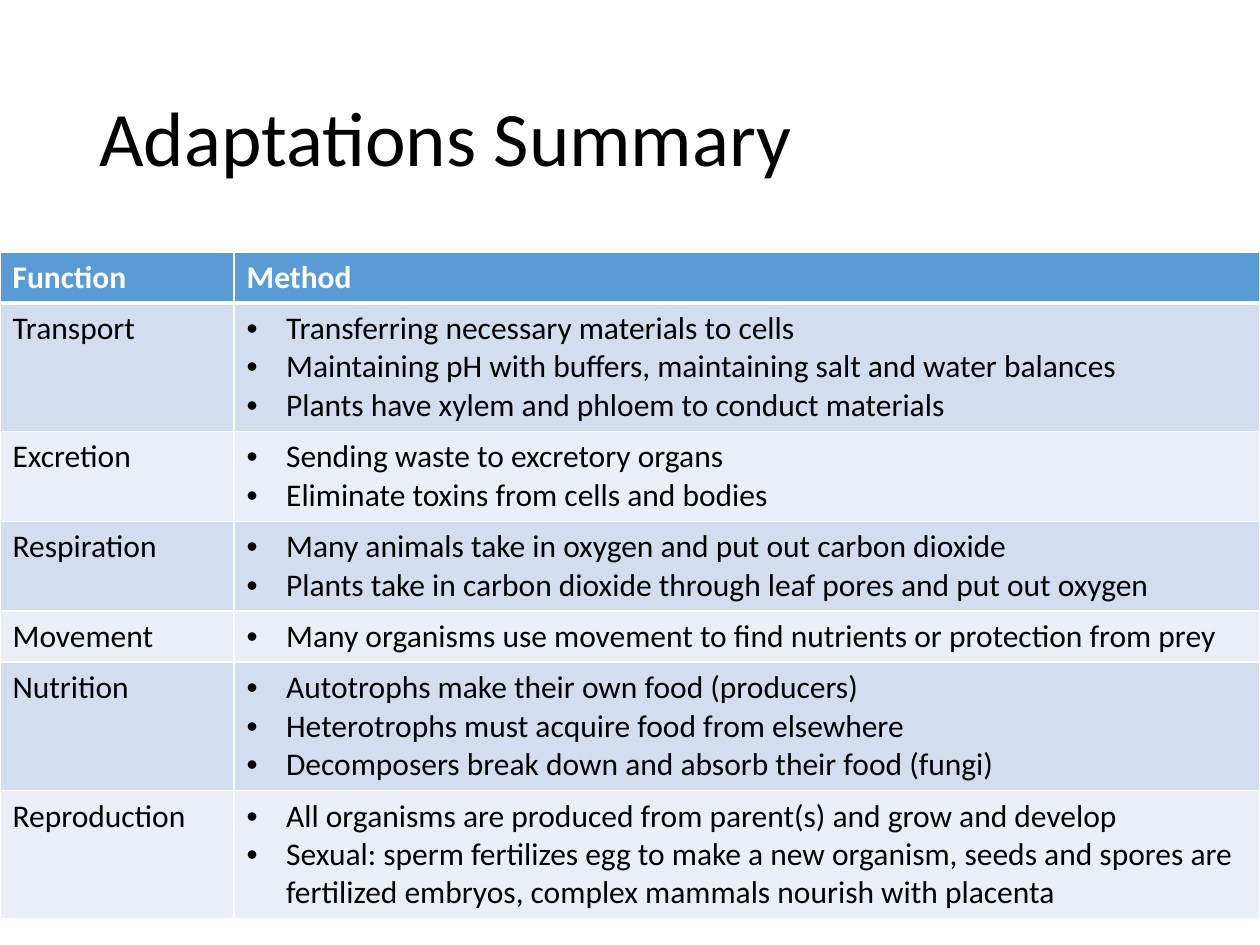
from lxml import etree
from pptx import Presentation
from pptx import util as u
from pptx.dml.color import RGBColor
from pptx.enum import text
from pptx.oxml.ns import qn

COLORS = {"text": "000000", "white": "FFFFFF", "header": "5B9BD5",
          "odd": "D2DEEF", "even": "EAEFF7"}
FONT = "Calibri"
LINE_HEIGHT, CELL_PADDING = 0.78, 0.25  # cm

HEADINGS = ["Function", "Method"]
# Function, its methods, lines of text they take
ADAPTATIONS = [
    ("Transport", ["Transferring necessary materials to cells",
                   "Maintaining pH with buffers, maintaining salt and water balances",
                   "Plants have xylem and phloem to conduct materials"], 3),
    ("Excretion", ["Sending waste to excretory organs",
                   "Eliminate toxins from cells and bodies"], 2),
    ("Respiration", ["Many animals take in oxygen and put out carbon dioxide",
                     "Plants take in carbon dioxide through leaf pores and put out oxygen"], 2),
    ("Movement", ["Many organisms use movement to find nutrients or protection from prey"], 1),
    ("Nutrition", ["Autotrophs make their own food (producers)",
                   "Heterotrophs must acquire food from elsewhere",
                   "Decomposers break down and absorb their food (fungi)"], 3),
    ("Reproduction", ["All organisms are produced from parent(s) and grow and develop",
                      "Sexual: sperm fertilizes egg to make a new organism, seeds and spores are "
                      "fertilized embryos, complex mammals nourish with placenta"], 3),
]


class SlideBuilder:
    def __init__(self, slide):
        self.slide = slide

    def style(self, p, size, color="text", bold=False):
        p.alignment = text.PP_ALIGN.LEFT
        for r in p.runs:
            r.font.name, r.font.size, r.font.bold = FONT, u.Pt(size), bold
            r.font.color.rgb = RGBColor.from_string(COLORS[color])

    def title(self, words, left, top, width, height):
        sp = self.slide.shapes.title
        sp.left, sp.top, sp.width, sp.height = map(u.Cm, (left, top, width, height))
        tf = sp.text_frame
        tf.text = words
        tf.vertical_anchor = text.MSO_ANCHOR.MIDDLE
        p = tf.paragraphs[0]
        p.line_spacing = 0.9
        self.style(p, 44)

    def table(self, left, top, col_widths, row_heights):
        frame = self.slide.shapes.add_table(
            len(row_heights), len(col_widths), u.Cm(left), u.Cm(top),
            u.Cm(sum(col_widths)), u.Cm(sum(row_heights)))
        for col, width in zip(frame.table.columns, col_widths):
            col.width = u.Cm(width)
        for row, height in zip(frame.table.rows, row_heights):
            row.height = u.Cm(height)
        return frame.table

    def cell(self, cell, lines, fill, color="text", bold=False, bullets=False, bottom=1):
        self.borders(cell, bottom)
        cell.fill.solid()
        cell.fill.fore_color.rgb = RGBColor.from_string(COLORS[fill])
        cell.text_frame.text = "\n".join(lines)
        for p in cell.text_frame.paragraphs:
            self.style(p, 18, color, bold)
            if bullets:
                self.bullet(p)

    def borders(self, cell, bottom):
        tc_pr = cell._tc.get_or_add_tcPr()
        for side, width in (("L", 1), ("R", 1), ("T", 1), ("B", bottom)):
            ln = etree.SubElement(tc_pr, qn(f"a:ln{side}"), w=str(u.Pt(width)))
            fill = etree.SubElement(ln, qn("a:solidFill"))
            etree.SubElement(fill, qn("a:srgbClr"), val=COLORS["white"])

    def bullet(self, p):
        p_pr = p._p.get_or_add_pPr()
        indent = u.Pt(22.5)
        p_pr.set("marL", str(indent))
        p_pr.set("indent", str(-indent))
        etree.SubElement(p_pr, qn("a:buFont"), typeface="Arial")
        etree.SubElement(p_pr, qn("a:buChar"), char="•")


def main():
    prs = Presentation()
    prs.slide_width, prs.slide_height = u.Cm(25.4), u.Cm(19.05)
    page = SlideBuilder(prs.slides.add_slide(prs.slide_layouts[5]))

    # Title
    page.title("Adaptations Summary", 1.75, 1.01, 21.9, 3.68)

    # Table frame: each row is as tall as its lines of text
    line_counts = [1] + [count for _, _, count in ADAPTATIONS]
    heights = [CELL_PADDING + LINE_HEIGHT * count for count in line_counts]
    table = page.table(0, 5.08, [4.72, 20.68], heights)

    # Header row
    for col, heading in enumerate(HEADINGS):
        page.cell(table.cell(0, col), [heading], "header", "white", bold=True, bottom=3)

    # Body rows in alternating bands
    for row, (function, methods, _) in enumerate(ADAPTATIONS, start=1):
        band = "odd" if row % 2 else "even"
        page.cell(table.cell(row, 0), [function], band, bottom=1)
        page.cell(table.cell(row, 1), methods, band, bullets=True)

    prs.save("out.pptx")


if __name__ == "__main__":
    main()
